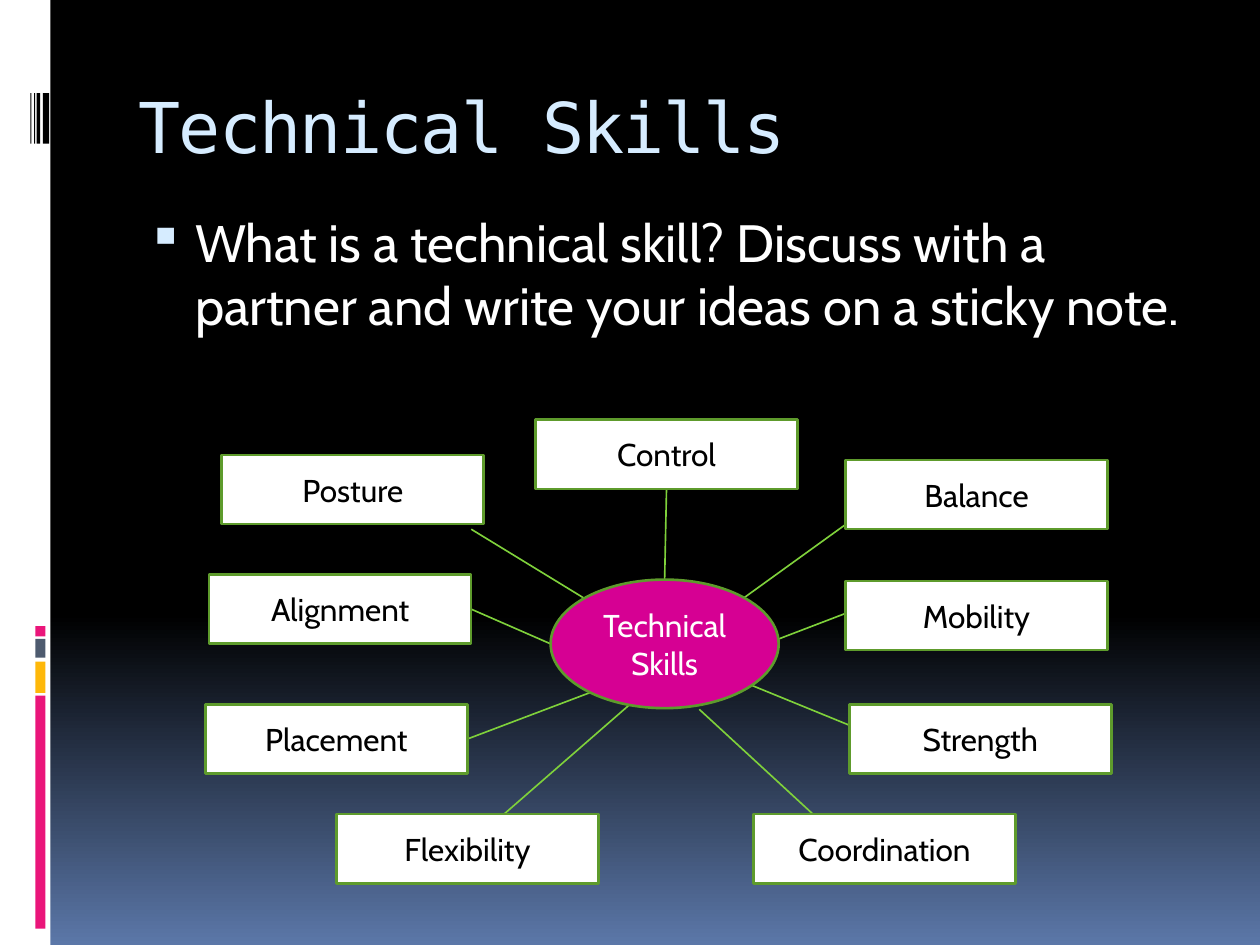
from copy import deepcopy

from lxml.etree import SubElement
from pptx import Presentation
from pptx.dml.color import RGBColor
from pptx.enum.shapes import MSO_CONNECTOR, MSO_SHAPE
from pptx.enum.text import MSO_ANCHOR, PP_ALIGN
from pptx.oxml.ns import qn
from pptx.util import Emu, Inches, Pt

TITLE = "Technical Skills"
QUESTION = "What is a technical skill? Discuss with a partner and write your ideas on a sticky note."
GRADIENT = [(0, "000000"), (0.65, "000000"), (1, "5B77A8")]
SIDE_BARS = [
    (0, 0, 0.4, 7.5, "FFFFFF"),
    (0.28, 5.52, 0.08, 1.85, "EA157A"),
    (0.28, 5.25, 0.08, 0.25, "FEB80A"),
    (0.28, 5.07, 0.08, 0.15, "4E5B6F"),
    (0.28, 4.97, 0.08, 0.08, "EA157A"),
]
BARCODE = [(0.34, 0.05), (0.29, 0.03), (0.27, 0.01), (0.24, 0.01)]
BOX_W, BOX_H = 2.08, 0.55
HUB = (4.37, 4.6, 1.81, 1.02)
SKILLS = [
    ("Posture", (1.76, 3.61), (4.64, 4.75), (3.74, 4.2), None),
    ("Alignment", (1.66, 4.56), (4.37, 5.11), (3.74, 4.83), 3),
    ("Placement", (1.63, 5.59), (4.86, 5.43), (3.71, 5.87), 3),
    ("Coordination", (5.98, 6.46), (5.55, 5.63), (6.57, 6.57), None),
    ("Strength", (6.74, 5.59), (5.87, 5.4), (7.02, 5.87), None),
    ("Mobility", (6.71, 4.61), (5.87, 5.19), (7.02, 4.75), None),
    ("Balance", (6.71, 3.65), (5.87, 4.77), (6.84, 4.07), None),
    ("Flexibility", (2.67, 6.46), (5, 5.59), (3.83, 6.61), None),
    ("Control", (4.25, 3.33), (5.28, 4.6), (5.29, 3.88), 2),
]


def rgb(color):
    """Turn a hex string into a colour."""
    return RGBColor.from_string(color)


def add_run(p, text, size, color, font="Cabin"):
    """Add a styled run to a paragraph."""
    r = p.add_run()
    r.text = text
    r.font.size, r.font.name = Pt(size), font
    r.font.color.rgb = rgb(color)
    return r


def add_block(s, kind, box, fill, line=None):
    """Add a flat filled shape with an optional outline."""
    sp = s.shapes.add_shape(kind, *map(Inches, box))
    sp.shadow.inherit = False
    sp.fill.solid()
    sp.fill.fore_color.rgb = rgb(fill)
    if line:
        sp.line.color.rgb = rgb(line)
        sp.line.width = Pt(1.5)
    else:
        sp.line.fill.background()
    return sp


def add_node(s, kind, box, fill, text, color):
    """Add a labelled node of the mind map."""
    sp = add_block(s, kind, box, fill, "5E9B2C")
    tf = sp.text_frame
    tf.word_wrap, tf.vertical_anchor = True, MSO_ANCHOR.MIDDLE
    p = tf.paragraphs[0]
    p.alignment = PP_ALIGN.CENTER
    add_run(p, text, 18, color)
    return sp


def add_spoke(s, start, end):
    """Add a thin line from the hub towards a skill."""
    sp = s.shapes.add_connector(MSO_CONNECTOR.STRAIGHT, *map(Inches, start + end))
    sp.line.color.rgb = rgb("7FD13B")
    sp.line.width = Pt(0.94)
    SubElement(sp.element.spPr, qn("a:effectLst"))
    return sp


def add_text(s, box, top):
    """Add a wrapping text box and return its first paragraph."""
    tf = s.shapes.add_textbox(*map(Inches, box)).text_frame
    tf.word_wrap, tf.margin_top = True, Inches(top)
    return tf.paragraphs[0]


def paint_background(s):
    """Fill the background with a three-stop vertical gradient."""
    fill = s.background.fill
    fill.gradient()
    fill.gradient_angle = 270
    first = next(s.element.iter(qn("a:gs")))
    first.addnext(deepcopy(first))
    for stop, (position, color) in zip(fill.gradient_stops, GRADIENT):
        stop.position = position
        stop.color.rgb = rgb(color)


def add_bullet(p):
    """Give a paragraph a hanging square bullet."""
    pPr = p._p.get_or_add_pPr()
    pPr.set("marL", str(Inches(0.45)))
    pPr.set("indent", str(Emu(-Inches(0.38))))
    SubElement(SubElement(pPr, qn("a:buClr")), qn("a:srgbClr"), val="D6ECFF")
    SubElement(pPr, qn("a:buSzPct"), val="95000")
    SubElement(pPr, qn("a:buChar"), char="▪")


def main():
    """Build the slide and save it."""
    prs = Presentation()
    prs.slide_width, prs.slide_height = Inches(10), Inches(7.5)
    s = prs.slides.add_slide(prs.slide_layouts[6])
    paint_background(s)

    stripes = [(x, 0.74, w, 0.4, "000000") for x, w in BARCODE]
    for *box, color in SIDE_BARS + stripes:
        add_block(s, MSO_SHAPE.RECTANGLE, box, color)

    r = add_run(add_text(s, (1, 0.56, 8.5, 1), 0.1), TITLE, 40, "D6ECFF", "DejaVu Sans Mono")
    r.font._element.set("spc", "-100")
    p = add_text(s, (1, 1.62, 8.5, 5.33), 0.05)
    p.space_before = Pt(7)
    add_bullet(p)
    add_run(p, QUESTION, 30, "FFFFFF")

    spokes = [add_spoke(s, start, end) for _, _, start, end, _ in SKILLS]
    hub = add_node(s, MSO_SHAPE.OVAL, HUB, "D60093", TITLE, "FFFFFF")
    for spoke, (name, corner, _, _, side) in zip(spokes, SKILLS):
        box = add_node(s, MSO_SHAPE.RECTANGLE, (*corner, BOX_W, BOX_H), "FFFFFF", name, "000000")
        if side is not None:
            spoke.end_connect(box, side)
    spokes[-1].begin_connect(hub, 0)

    prs.save("out.pptx")


if __name__ == "__main__":
    main()
